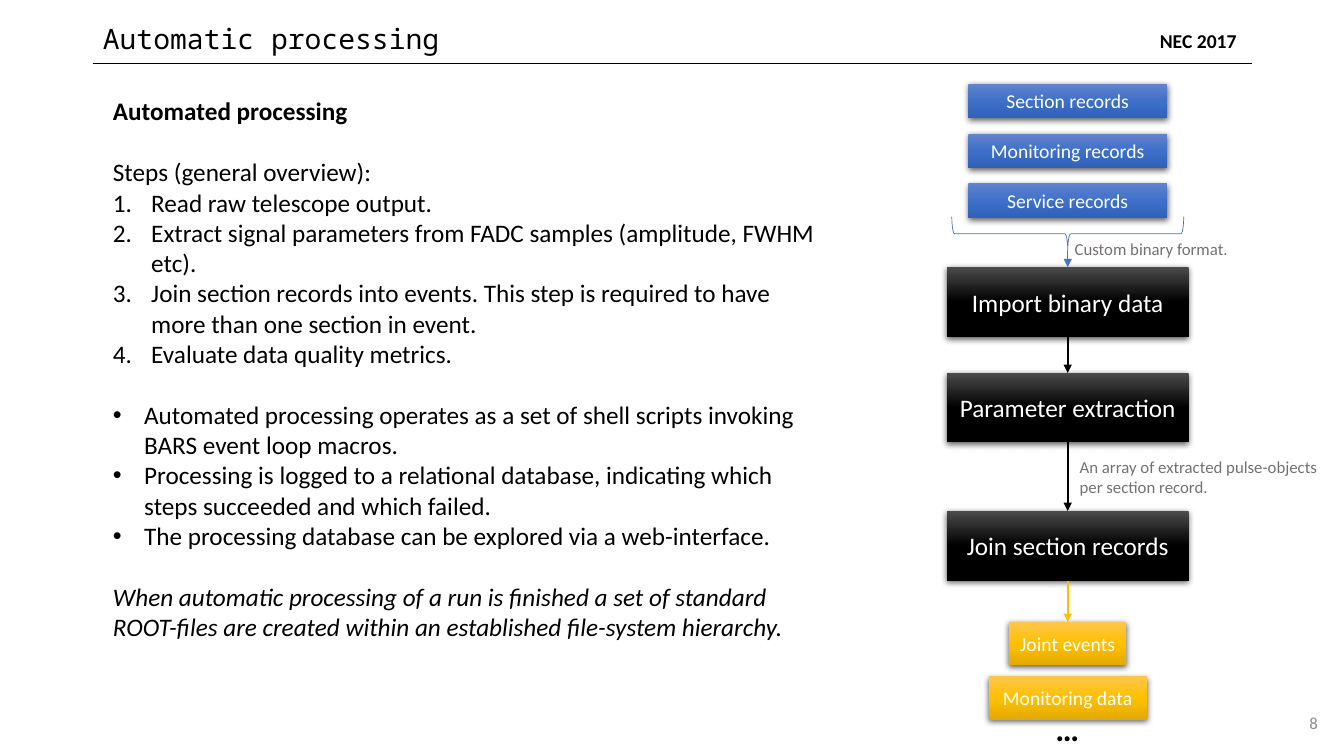
from copy import deepcopy
from dataclasses import dataclass
from typing import Any

from lxml import etree
from pptx import Presentation
from pptx import util as u
from pptx.dml.color import RGBColor
from pptx.enum import shapes, text
from pptx.oxml.ns import qn

BLACK = RGBColor(0x00, 0x00, 0x00)
WHITE = RGBColor(0xFF, 0xFF, 0xFF)
BLUE = RGBColor(0x44, 0x72, 0xC4)
GOLD = RGBColor(0xFF, 0xC0, 0x00)
NOTE_GREY = RGBColor(0x76, 0x71, 0x71)
NUMBER_GREY = RGBColor(0x8C, 0x8C, 0x8C)
BLUE_GRADIENT = (RGBColor(0x61, 0x83, 0xCB), RGBColor(0x3E, 0x70, 0xCA), RGBColor(0x30, 0x62, 0xBB))
BLACK_GRADIENT = (RGBColor(0x4B, 0x4B, 0x4B), BLACK, BLACK)
GOLD_GRADIENT = (RGBColor(0xFF, 0xC6, 0x4B), GOLD, RGBColor(0xE3, 0xAB, 0x00))

LEFT, CENTER, RIGHT = text.PP_ALIGN.LEFT, text.PP_ALIGN.CENTER, text.PP_ALIGN.RIGHT
TOP, MIDDLE = text.MSO_ANCHOR.TOP, text.MSO_ANCHOR.MIDDLE
FLOW_CENTER = 105.9
BLANK_LINE = 22

presentation = Presentation()
presentation.slide_width, presentation.slide_height = u.Inches(13.33), u.Inches(7.5)
COLUMN = presentation.slide_width / 133.3
ROW = presentation.slide_height / 75
slide = presentation.slides.add_slide(presentation.slide_layouts[1])


@dataclass
class Box:
    label: str
    top: float
    width: float
    height: float
    gradient: tuple[RGBColor, ...]
    size: int


@dataclass
class Label:
    words: str
    area: tuple[float, float, float, float]
    size: int
    color: RGBColor = BLACK
    bold: bool = False
    align: Any = LEFT
    anchor: Any = TOP
    wrap: bool = False


@dataclass
class Item:
    words: str
    bullet: str = ""
    indent: float = 0
    before: int = 0
    bold: bool = False
    italic: bool = False


def apply(target: Any, values: dict[str, Any]) -> None:
    for name, value in values.items():
        setattr(target, name, value)


def grid(left: float, top: float, width: float, height: float) -> list[int]:
    return [round(left * COLUMN), round(top * ROW), round(width * COLUMN), round(height * ROW)]


def place(shape: Any, area: tuple[float, float, float, float]) -> None:
    apply(shape, dict(zip(("left", "top", "width", "height"), grid(*area))))


def write(shape: Any, words: str, align: Any, size: int, color: RGBColor,
          name: str = "Calibri", bold: bool = False) -> None:
    shape.text_frame.text = words
    for paragraph in shape.text_frame.paragraphs:
        paragraph.alignment = align
        font = paragraph.runs[0].font
        apply(font, {"name": name, "size": u.Pt(size), "bold": bold})
        font.color.rgb = color


def add_label(label: Label) -> None:
    shape = slide.shapes.add_textbox(*grid(*label.area))
    write(shape, label.words, label.align, label.size, label.color, bold=label.bold)
    apply(shape.text_frame, {"word_wrap": label.wrap, "vertical_anchor": label.anchor})


def add_shadow(shape: Any) -> None:
    shape.shadow.inherit = False
    effects = shape._element.spPr.find(qn("a:effectLst"))
    shadow = etree.SubElement(effects, qn("a:outerShdw"), blurRad=str(u.Pt(4.5)),
                              dist=str(u.Pt(1.5)), dir="5400000", algn="ctr", rotWithShape="0")
    color = etree.SubElement(shadow, qn("a:srgbClr"), val=str(BLACK))
    etree.SubElement(color, qn("a:alpha"), val="63000")


def add_box(box: Box) -> Any:
    area = grid(FLOW_CENTER - box.width / 2, box.top, box.width, box.height)
    shape = slide.shapes.add_shape(shapes.MSO_SHAPE.RECTANGLE, *area)
    shape.fill.gradient()
    shape.fill.gradient_angle = 270
    stops = shape._element.spPr.find(".//" + qn("a:gsLst"))
    stops.insert(1, deepcopy(stops[0]))
    for stop, color, position in zip(shape.fill.gradient_stops, box.gradient, (0, 0.5, 1)):
        stop.color.rgb = color
        stop.position = position
    shape.line.fill.background()
    add_shadow(shape)
    write(shape, box.label, CENTER, box.size, WHITE)
    apply(shape.text_frame, {"word_wrap": False, "vertical_anchor": MIDDLE})
    return shape


def add_line(start: tuple[float, float], end: tuple[float, float], color: RGBColor,
             width: float, arrow: bool = True) -> Any:
    begin_x, begin_y, end_x, end_y = grid(*start, *end)
    line = slide.shapes.add_connector(shapes.MSO_CONNECTOR.STRAIGHT, begin_x, begin_y, end_x, end_y)
    line.line.color.rgb = color
    line.line.width = u.Pt(width)
    if arrow:
        etree.SubElement(line.line._get_or_add_ln(), qn("a:tailEnd"), type="triangle")
    etree.SubElement(line._element.spPr, qn("a:effectLst"))
    return line


def add_item(paragraph: Any, item: Item) -> None:
    properties = paragraph._p.get_or_add_pPr()
    indent = round(item.indent * COLUMN)
    properties.set("marL", str(indent))
    properties.set("indent", str(-indent))
    if item.bullet == "1.":
        etree.SubElement(properties, qn("a:buFont"), typeface="+mj-lt")
        etree.SubElement(properties, qn("a:buAutoNum"), type="arabicPeriod")
    elif item.bullet:
        etree.SubElement(properties, qn("a:buFont"), typeface="Arial")
        etree.SubElement(properties, qn("a:buChar"), char=item.bullet)
    else:
        etree.SubElement(properties, qn("a:buNone"))
    apply(paragraph, {"alignment": LEFT, "space_before": u.Pt(item.before), "space_after": u.Pt(0)})
    run = paragraph.add_run()
    run.text = item.words
    apply(run.font, {"name": "Calibri", "size": u.Pt(18), "bold": item.bold, "italic": item.italic})
    run.font.color.rgb = BLACK


ITEMS = [
    Item("Automated processing", bold=True),
    Item("Steps (general overview):", before=BLANK_LINE),
    Item("Read raw telescope output.", "1.", 3.8),
    Item("Extract signal parameters from FADC samples (amplitude, FWHM etc).", "1.", 3.8),
    Item("Join section records into events. This step is required to have more than one section in event.",
         "1.", 3.8),
    Item("Evaluate data quality metrics.", "1.", 3.8),
    Item("Automated processing operates as a set of shell scripts invoking BARS event loop macros.",
         "•", 3.1, BLANK_LINE),
    Item("Processing is logged to a relational database, indicating which steps succeeded and which failed.",
         "•", 3.1),
    Item("The processing database can be explored via a web-interface.", "•", 3.1),
    Item("When automatic processing of a run is finished a set of standard ROOT-files are created "
         "within an established file-system hierarchy.", before=BLANK_LINE, italic=True),
]
RECORDS = ["Section records", "Monitoring records", "Service records"]
STEPS = [("Import binary data", 26.5), ("Parameter extraction", 37), ("Join section records", 50.7)]
LABELS = [
    Label("NEC 2017", (113.6, 1.7, 10.5, 4.6), 14, bold=True, align=CENTER, anchor=MIDDLE, wrap=True),
    Label("8", (126.4, 69.7, 5.3, 4), 12, NUMBER_GREY, align=RIGHT, anchor=MIDDLE, wrap=True),
    Label("Custom binary format.", (105.6, 23.2, 17.4, 3), 12, NOTE_GREY),
    Label("An array of extracted pulse-objects\nper section record.", (106.1, 44.8, 26, 5), 12, NOTE_GREY),
    Label("…", (103.7, 69.7, 4.4, 5), 24, bold=True),
]

add_line((9.2, 6.3), (124.2, 6.3), BLACK, 1.25, arrow=False)

title = slide.shapes.title
place(title, (9.2, 1.7, 103.1, 4.6))
write(title, "Automatic processing", LEFT, 20, BLACK, "Noto Sans Mono")
title.text_frame.paragraphs[0].line_spacing = 0.9
body = slide.placeholders[1]
place(body, (10.2, 9, 71.7, 70.7))
for frame, anchor in ((title.text_frame, MIDDLE), (body.text_frame, TOP)):
    apply(frame, {"auto_size": text.MSO_AUTO_SIZE.NONE, "word_wrap": True, "vertical_anchor": anchor})
for index, item in enumerate(ITEMS):
    add_item(body.text_frame.add_paragraph() if index else body.text_frame.paragraphs[0], item)

for index, record in enumerate(RECORDS):
    add_box(Box(record, 8.3 + 4.95 * index, 19.7, 3.4, BLUE_GRADIENT, 14))
flow = [add_box(Box(step, top, 24, 6.9, BLACK_GRADIENT, 18)) for step, top in STEPS]
flow.append(add_box(Box("Joint events", 61.7, 11.6, 4.3, GOLD_GRADIENT, 14)))
add_box(Box("Monitoring data", 67.1, 15.7, 4.3, GOLD_GRADIENT, 14))

brace = slide.shapes.add_shape(shapes.MSO_SHAPE.RIGHT_BRACE, *grid(104.2, 11.7, 3.4, 23))
brace.rotation = 90
brace.fill.background()
brace.line.color.rgb = BLUE
brace.line.width = u.Pt(0.5)
brace.shadow.inherit = False

input_arrow = add_line((FLOW_CENTER, 24.9), (FLOW_CENTER, 26.5), BLUE, 0.5)
input_arrow.end_connect(flow[0], 0)
for source, target, color in zip(flow, flow[1:], (BLACK, BLACK, GOLD)):
    arrow = add_line((FLOW_CENTER, 33.4), (FLOW_CENTER, 37), color, 1.5)
    arrow.begin_connect(source, 2)
    arrow.end_connect(target, 0)

for label in LABELS:
    add_label(label)

presentation.save("out.pptx")
